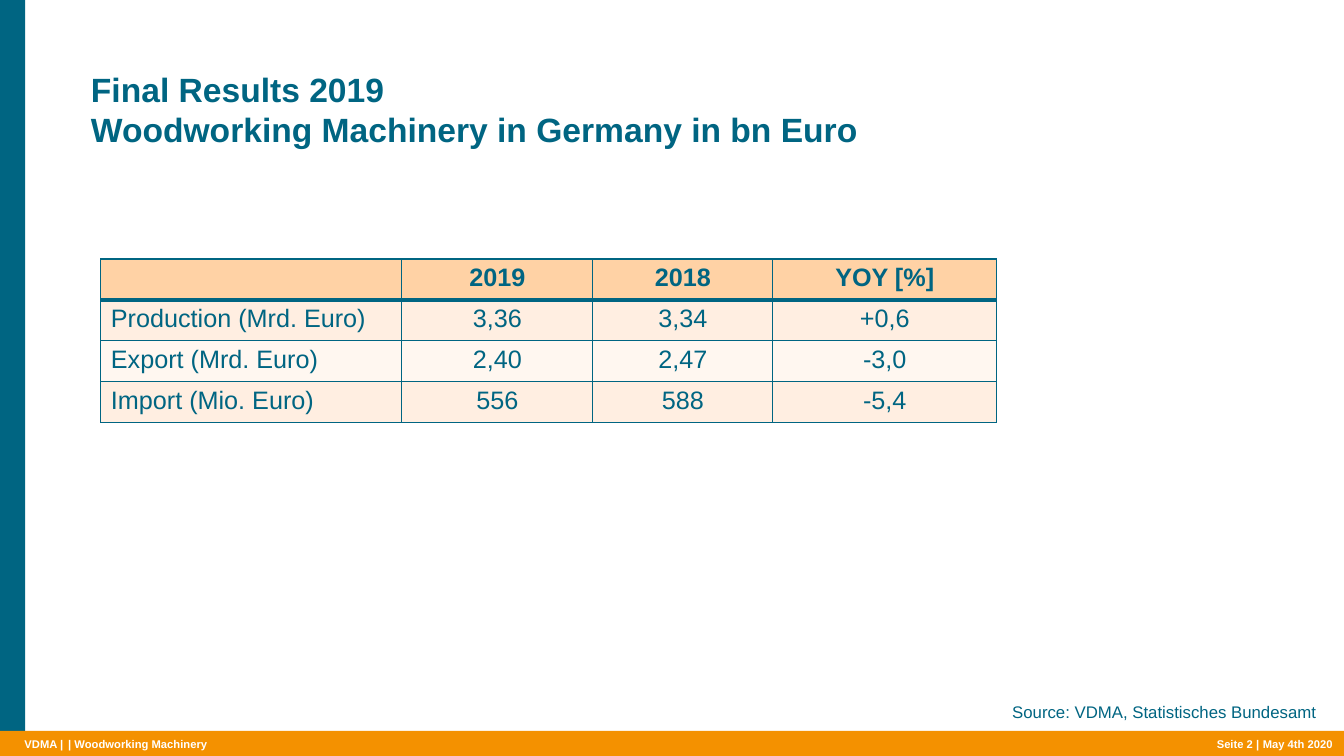
from dataclasses import dataclass

from lxml.etree import SubElement
from pptx import Presentation
from pptx.dml.color import RGBColor
from pptx.enum.shapes import MSO_SHAPE
from pptx.enum.text import MSO_ANCHOR, PP_ALIGN
from pptx.oxml.ns import qn
from pptx.util import Pt


@dataclass(frozen=True)
class Theme:
    font: str = "Arial"
    teal: str = "006582"
    orange: str = "F49100"
    white: str = "FFFFFF"
    header: str = "FFD2A5"
    bands: tuple = ("FFEEE1", "FFF7F0")
    title_size: int = 24
    table_size: int = 18
    source_size: int = 12
    footer_size: int = 8


theme = Theme()


def add_run(p, text, size, color, bold=False):
    r = p.add_run()
    r.text = text
    r.font.name = theme.font
    r.font.size = Pt(size)
    r.font.bold = bold
    r.font.color.rgb = RGBColor.from_string(color)


def set_borders(cell, top, bottom):
    """Draw thin lines at the sides of a cell, with own widths at top and bottom."""
    tcPr = cell._tc.get_or_add_tcPr()
    widths = {"a:lnL": 1, "a:lnR": 1, "a:lnT": top, "a:lnB": bottom}
    for i, (tag, width) in enumerate(widths.items()):
        ln = SubElement(tcPr, qn(tag), w=str(Pt(width)))
        SubElement(SubElement(ln, qn("a:solidFill")), qn("a:srgbClr"), val=theme.teal)
        tcPr.insert(i, ln)


prs = Presentation()
prs.slide_width, prs.slide_height = Pt(960), Pt(540)
slide = prs.slides.add_slide(prs.slide_layouts[5])

# Side bar and footer bar
for left, top, width, height, color in (
    (0, 0, 18, 540, theme.teal),
    (0, 522, 960, 18, theme.orange),
):
    sp = slide.shapes.add_shape(
        MSO_SHAPE.RECTANGLE, Pt(left), Pt(top), Pt(width), Pt(height))
    sp.shadow.inherit = False
    sp.fill.solid()
    sp.fill.fore_color.rgb = RGBColor.from_string(color)
    sp.line.fill.background()

# Title
title = slide.shapes.title
title.left, title.top, title.width, title.height = Pt(65), Pt(49), Pt(779), Pt(58.5)
tf = title.text_frame
tf.margin_left = tf.margin_top = tf.margin_right = tf.margin_bottom = 0
tf.vertical_anchor = MSO_ANCHOR.TOP
tf.word_wrap = True
p = tf.paragraphs[0]
p.alignment = PP_ALIGN.LEFT
p.line_spacing = 1.0
add_run(p, "Final Results 2019", theme.title_size, theme.teal, True)
p.add_line_break()
add_run(p, "Woodworking Machinery in Germany in bn Euro",
        theme.title_size, theme.teal, True)

# Footer
for text, left, width, align in (
    ("VDMA |", 17.5, 28, PP_ALIGN.LEFT),
    ("| Woodworking Machinery", 48.75, 277, PP_ALIGN.LEFT),
    ("Seite 2 |", 864.5, 35, PP_ALIGN.RIGHT),
    ("May 4th 2020", 902, 56, PP_ALIGN.LEFT),
):
    tf = slide.shapes.add_textbox(Pt(left), Pt(527), Pt(width), Pt(9.5)).text_frame
    tf.margin_left = tf.margin_top = tf.margin_right = tf.margin_bottom = 0
    tf.vertical_anchor = MSO_ANCHOR.MIDDLE
    tf.word_wrap = True
    p = tf.paragraphs[0]
    p.alignment = align
    add_run(p, text, theme.footer_size, theme.white, True)

# Source
tf = slide.shapes.add_textbox(Pt(678), Pt(497.5), Pt(269.5), Pt(21.5)).text_frame
tf.word_wrap = True
p = tf.paragraphs[0]
p.alignment = PP_ALIGN.RIGHT
add_run(p, "Source: VDMA, Statistisches Bundesamt", theme.source_size, theme.teal)

# Results table
results = (
    ("", "2019", "2018", "YOY [%]"),
    ("Production (Mrd. Euro)", "3,36", "3,34", "+0,6"),
    ("Export (Mrd. Euro)", "2,40", "2,47", "-3,0"),
    ("Import (Mio. Euro)", "556", "588", "-5,4"),
)
widths = (215, 136.5, 128.5, 160)
row_height = 29.2
table = slide.shapes.add_table(
    len(results), len(widths), Pt(72), Pt(185),
    Pt(sum(widths)), Pt(row_height * len(results))).table
for column, width in zip(table.columns, widths):
    column.width = Pt(width)
for i, row in enumerate(results):
    table.rows[i].height = Pt(row_height)
    is_header = i == 0
    for j, text in enumerate(row):
        cell = table.cell(i, j)
        cell.fill.solid()
        cell.fill.fore_color.rgb = RGBColor.from_string(
            theme.header if is_header else theme.bands[(i - 1) % 2])
        set_borders(cell, top=3 if i == 1 else 1, bottom=3 if is_header else 1)
        if text:
            p = cell.text_frame.paragraphs[0]
            p.alignment = PP_ALIGN.CENTER if j else PP_ALIGN.LEFT
            add_run(p, text, theme.table_size, theme.teal, is_header)

prs.save("out.pptx")
